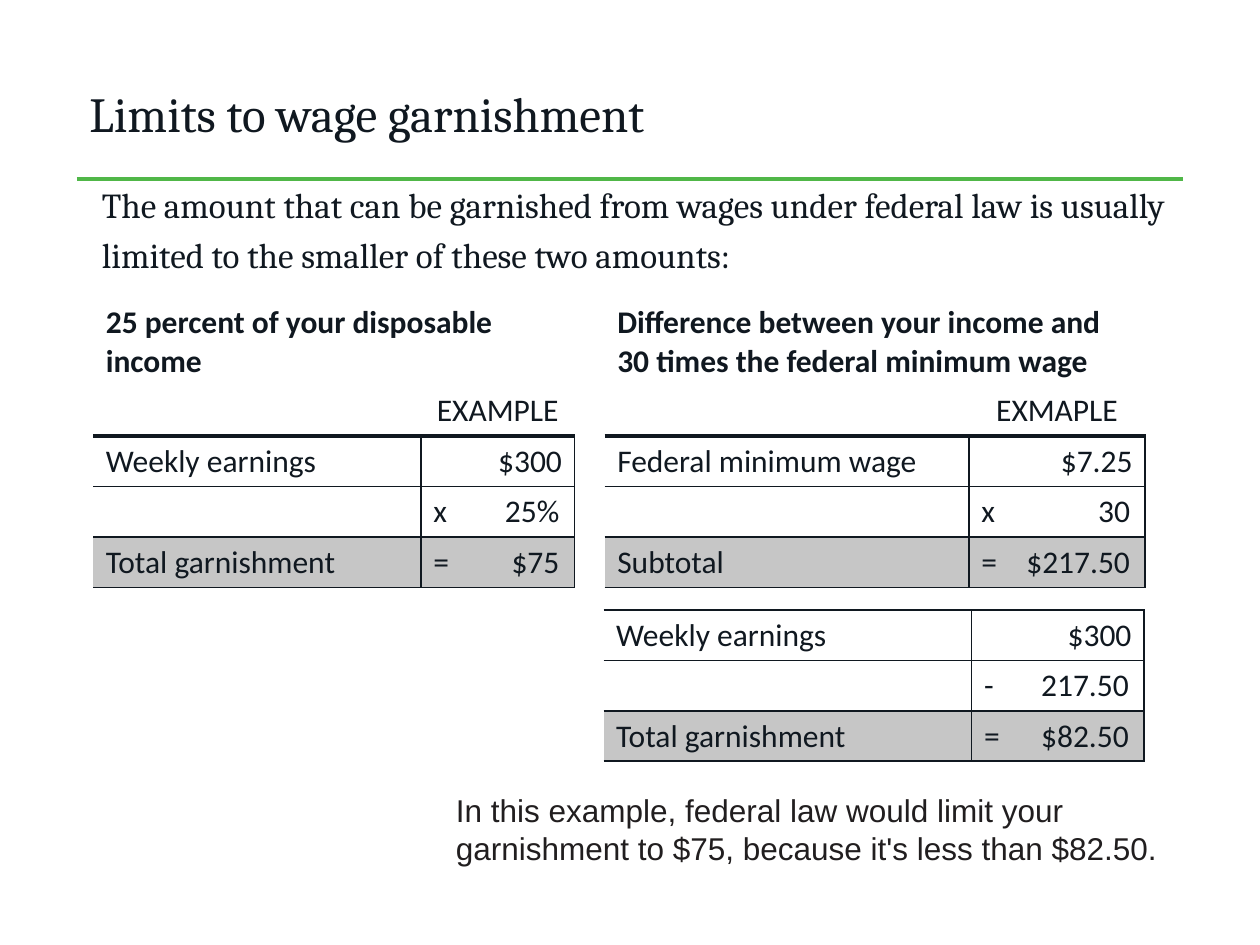
import pptx
import pptx.dml.color
import pptx.enum.text
import pptx.oxml
import pptx.oxml.ns
import pptx.util
from lxml import etree
from pptx.util import Inches, Pt

# Content
TITLE = "Limits to wage garnishment"
INTRO = ("The amount that can be garnished from wages under federal law is "
         "usually limited to the smaller of these two amounts:")
NOTE = ("In this example, federal law would limit your garnishment to $75, "
        "because it's less than $82.50.")
# Each block: heading, example label, rows of (label, operator, amount)
PERCENT = ("25 percent of your disposable income", "EXAMPLE", [
    ("Weekly earnings", "", "$300"),
    ("", "x", "25%"),
    ("Total garnishment", "=", "$75")])
DIFFERENCE = ("Difference between your income and 30 times the federal minimum wage",
              "EXMAPLE", [
    ("Federal minimum wage", "", "$7.25"),
    ("", "x", "30"),
    ("Subtotal", "=", "$217.50")])
REMAINDER = [
    ("Weekly earnings", "", "$300"),
    ("", "-", "217.50"),
    ("Total garnishment", "=", "$82.50")]

COLORS = {"ink": "101820", "note": "211E1F", "rule": "50B748", "total": "C6C6C6"}
NO_STYLE = "{2D5ABB26-0587-4C30-8999-92F81FD0307C}"
ALIGN = pptx.enum.text.PP_ALIGN
QN = pptx.oxml.ns.qn
THICK, THIN = 2.25, 1
ROW_HEIGHT = 0.4
CELL_PADDING = 0.2


def rgb(name):
    return pptx.dml.color.RGBColor.from_string(COLORS[name])


def style(paragraph, font, size, color="ink", bold=False, align=ALIGN.LEFT):
    paragraph.alignment = align
    paragraph.font.name = font
    paragraph.font.size = Pt(size)
    paragraph.font.bold = bold
    paragraph.font.color.rgb = rgb(color)


def write_cell(cell, text, **options):
    paragraph = cell.text_frame.paragraphs[0]
    paragraph.text = text
    style(paragraph, "Calibri", 18, **options)


def set_borders(cell, **widths):
    properties = cell._tc.get_or_add_tcPr()
    for side in "LRTB":
        width = widths.get(side, 0)
        line = etree.SubElement(properties, QN(f"a:ln{side}"), w=str(int(Pt(width))))
        if width:
            fill = etree.SubElement(line, QN("a:solidFill"))
            etree.SubElement(fill, QN("a:srgbClr"), val=COLORS["ink"])
        else:
            etree.SubElement(line, QN("a:noFill"))


def add_plain_table(slide, left, top, widths, heights):
    frame = slide.shapes.add_table(
        len(heights), len(widths), Inches(left), Inches(top),
        Inches(sum(widths)), Inches(sum(heights)))
    table = frame.table
    table.first_row = table.horz_banding = False
    table._tbl.tblPr.find(QN("a:tableStyleId")).text = NO_STYLE
    for column, width in zip(table.columns, widths):
        column.width = Inches(width)
    for row, height in zip(table.rows, heights):
        row.height = Inches(height)
    return table


def fill_sum(table, first_row, column, rows, top_width):
    """Write one calculation; its last row is the shaded result."""
    for index, (label, operator, amount) in enumerate(rows):
        label_cell = table.cell(first_row + index, column)
        amount_cell = table.cell(first_row + index, column + 1)
        top = THIN if index else top_width
        set_borders(label_cell, T=top, R=THIN, B=THIN)
        set_borders(amount_cell, L=THIN, T=top, R=THIN, B=THIN)
        write_cell(label_cell, label)
        if operator:
            # Operator on the left, amount on a right-hand tab stop
            tab = table.columns[column + 1].width - Inches(CELL_PADDING + 0.02)
            properties = amount_cell.text_frame.paragraphs[0]._p.get_or_add_pPr()
            tabs = etree.SubElement(properties, QN("a:tabLst"))
            etree.SubElement(tabs, QN("a:tab"), pos=str(int(tab)), algn="r")
            write_cell(amount_cell, f"{operator}\t{amount}")
        else:
            write_cell(amount_cell, amount, align=ALIGN.RIGHT)
        for cell in (label_cell, amount_cell):
            if index == len(rows) - 1:
                cell.fill.solid()
                cell.fill.fore_color.rgb = rgb("total")
            else:
                cell.fill.background()


def add_text(slide, left, top, width, height, text):
    box = slide.shapes.add_textbox(
        Inches(left), Inches(top), Inches(width), Inches(height))
    box.text_frame.word_wrap = True
    paragraph = box.text_frame.paragraphs[0]
    paragraph.text = text
    return paragraph


def main():
    deck = pptx.Presentation()
    deck.slide_width, deck.slide_height = Inches(10), Inches(7.5)
    slide = deck.slides.add_slide(deck.slide_layouts[5])

    # Title and rule
    title = slide.shapes.title
    title.left, title.top = Inches(0.61), Inches(0.49)
    title.width, title.height = Inches(8.79), Inches(0.81)
    title.text_frame.text = TITLE
    title.text_frame.vertical_anchor = pptx.enum.text.MSO_ANCHOR.MIDDLE
    style(title.text_frame.paragraphs[0], "Cambria", 28)
    rule = slide.shapes.add_connector(
        pptx.enum.shapes.MSO_CONNECTOR.STRAIGHT,
        Inches(0.61), Inches(1.42), Inches(9.39), Inches(1.42))
    rule.line.color.rgb = rgb("rule")
    rule.line.width = Pt(2)
    etree.SubElement(rule._element.spPr, QN("a:effectLst"))

    # Introduction
    intro = add_text(slide, 0.61, 1.35, 8.79, 0.95, INTRO)
    intro._p.get_or_add_pPr().set("marL", str(int(Inches(0.1))))
    intro.line_spacing = 1.18
    style(intro, "Cambria", 20)

    # The two limits side by side, with an empty column between them
    limits = add_plain_table(slide, 0.74, 2.36, [2.6, 1.22, 0.23, 2.89, 1.4],
                             [0.7] + [ROW_HEIGHT] * 4)
    for column, (heading, example, rows) in ((0, PERCENT), (3, DIFFERENCE)):
        heading_cell = limits.cell(0, column)
        heading_cell.merge(limits.cell(0, column + 1))
        write_cell(heading_cell, heading, bold=True)
        for offset, text in enumerate(("", example)):
            cell = limits.cell(1, column + offset)
            set_borders(cell, B=THICK)
            write_cell(cell, text, align=ALIGN.CENTER)
        fill_sum(limits, 2, column, rows, THICK)
    for row in range(2, 5):
        set_borders(limits.cell(row, 2), L=THIN)

    # Remaining step of the second limit
    remainder = add_plain_table(slide, 4.79, 4.84, [2.92, 1.37], [ROW_HEIGHT] * 3)
    fill_sum(remainder, 0, 0, REMAINDER, THIN)

    # Conclusion
    note = add_text(slide, 3.52, 6.23, 5.87, 0.71, NOTE)
    style(note, "Arial", 18, color="note")

    deck.save("out.pptx")


if __name__ == "__main__":
    main()
